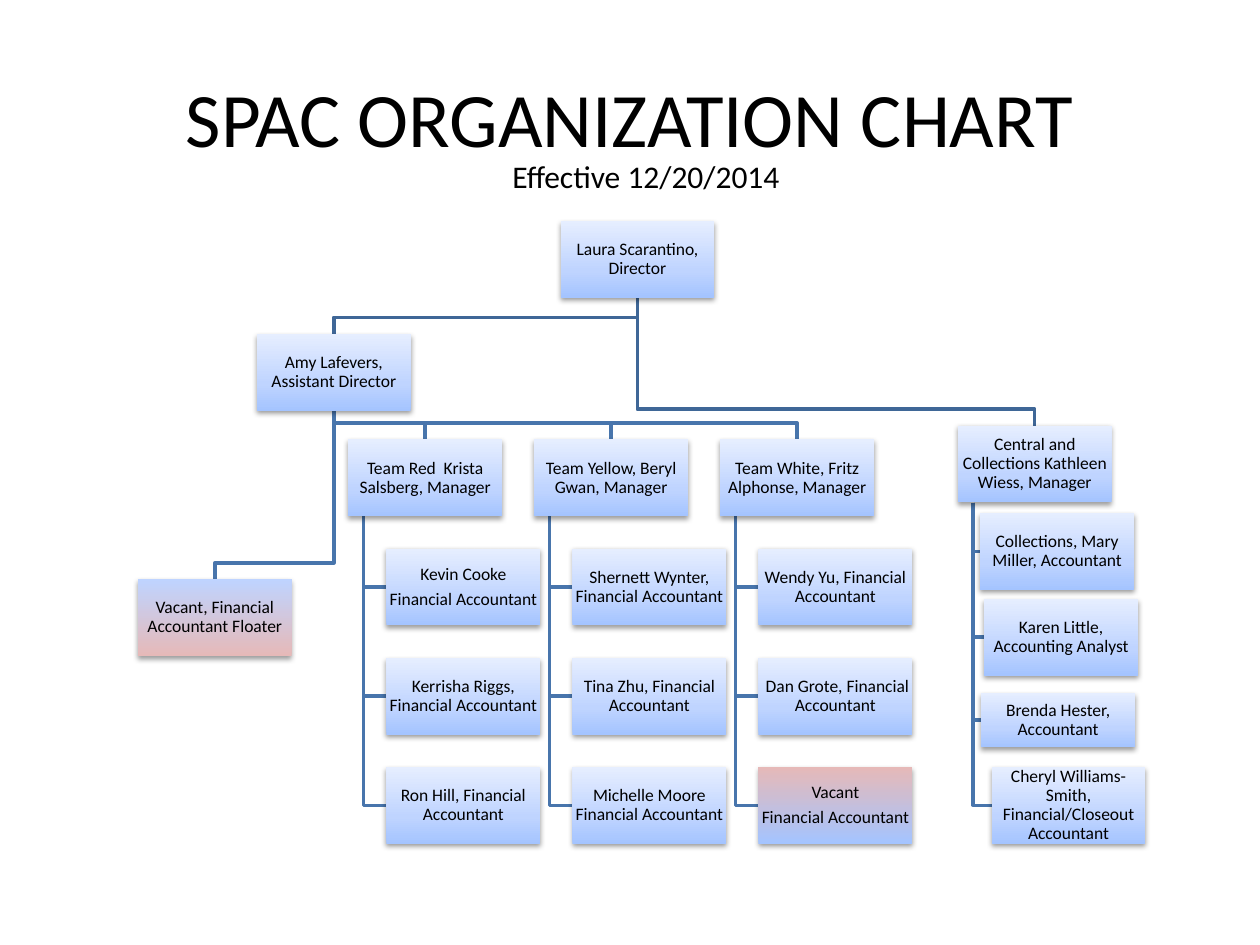
from collections import namedtuple

from lxml.etree import SubElement
from pptx import Presentation
from pptx.dml.color import RGBColor
from pptx.enum.shapes import MSO_SHAPE
from pptx.enum.text import MSO_ANCHOR, PP_ALIGN
from pptx.oxml.ns import qn
from pptx.util import Cm, Pt

COLORS = {
    "text": "000000",
    "shadow": "000000",
    "top_line": "3F6797",
    "line": "4875AC",
    "deep": "A4C4FF",
    "mid": "BFD4FF",
    "pale": "E6EEFF",
    "rose": "E6B9B8",
}
FILLS = {
    "staffed": [(0, "deep"), (35, "mid"), (100, "pale")],
    "floater": [(0, "rose"), (100, "mid"), (100, "pale")],
    "vacant": [(0, "deep"), (100, "rose"), (100, "pale")],
}
FONT = "Calibri"
BOX_W, BOX_H = 3.1, 1.55
BUS_GAP = 0.33
STEM_INSET = 0.31
TEAM_X, TEAM_Y, TEAM_PITCH = 7.02, 8.86, 3.75
MEMBER_INDENT, MEMBER_Y, MEMBER_PITCH = 0.77, 11.06, 2.2

Box = namedtuple("Box", "x y text fill h", defaults=("staffed", BOX_H))

DIRECTOR = Box(11.3, 4.45, "Laura Scarantino, Director")
ASSISTANT = Box(5.18, 6.73, "Amy Lafevers, Assistant Director")
FLOATER = Box(2.78, 11.68, "Vacant, Financial Accountant Floater", "floater")
CENTRAL = Box(19.31, 8.58, "Central and Collections Kathleen Wiess, Manager")
CENTRAL_STAFF = [
    Box(19.76, 10.34, "Collections, Mary Miller, Accountant"),
    Box(19.84, 12.07, "Karen Little, Accounting Analyst"),
    Box(19.78, 13.97, "Brenda Hester, Accountant", h=1.09),
    Box(19.99, 15.46, "Cheryl Williams-Smith, Financial/Closeout Accountant"),
]
TEAMS = [
    ("Team Red  Krista Salsberg, Manager",
     ["Kevin Cooke\nFinancial Accountant",
      "Kerrisha Riggs, Financial Accountant",
      "Ron Hill, Financial Accountant"]),
    ("Team Yellow, Beryl Gwan, Manager",
     ["Shernett Wynter, Financial Accountant",
      "Tina Zhu, Financial Accountant",
      "Michelle Moore Financial Accountant"]),
    ("Team White, Fritz Alphonse, Manager",
     ["Wendy Yu, Financial Accountant",
      " Dan Grote, Financial Accountant",
      "Vacant\nFinancial Accountant"]),
]


def rgb(name):
    return RGBColor.from_string(COLORS[name])


def write_text(s, text, size, align=PP_ALIGN.CENTER, anchor=MSO_ANCHOR.MIDDLE,
               margin=None, spacing=None, after=None):
    tf = s.text_frame
    tf.word_wrap = True
    tf.vertical_anchor = anchor
    if margin is not None:
        tf.margin_left = tf.margin_right = Cm(margin)
        tf.margin_top = tf.margin_bottom = Cm(margin)
    for i, line in enumerate(text.split("\n")):
        p = tf.add_paragraph() if i else tf.paragraphs[0]
        p.alignment = align
        p.line_spacing = spacing
        p.space_after = after
        r = p.add_run()
        r.text = line
        r.font.name = FONT
        r.font.size = Pt(size)
        r.font.color.rgb = rgb("text")


def add_label(slide, x, y, w, h, text, size, **fmt):
    s = slide.shapes.add_textbox(Cm(x), Cm(y), Cm(w), Cm(h))
    write_text(s, text, size, **fmt)


def add_color(parent, name, alpha=None):
    clr = SubElement(parent, qn("a:srgbClr"), val=COLORS[name])
    if alpha is not None:
        SubElement(clr, qn("a:alpha"), val=str(alpha * 1000))


def fill_gradient(s, stops):
    s.fill.gradient()
    s.fill.gradient_angle = 90
    gs_list = s.element.spPr.find(".//" + qn("a:gsLst"))
    for gs in list(gs_list):
        gs_list.remove(gs)
    for pos, name in stops:
        add_color(SubElement(gs_list, qn("a:gs"), pos=str(pos * 1000)), name)


def add_shadow(s):
    s.shadow.inherit = False
    effects = s.element.spPr.find(qn("a:effectLst"))
    shadow = SubElement(effects, qn("a:outerShdw"), blurRad=str(Pt(3.1)),
                        dist=str(Pt(1.6)), dir="5400000", rotWithShape="0")
    add_color(shadow, "shadow", 38)


def add_box(slide, box):
    s = slide.shapes.add_shape(MSO_SHAPE.RECTANGLE, Cm(box.x), Cm(box.y),
                               Cm(BOX_W), Cm(box.h))
    fill_gradient(s, FILLS[box.fill])
    s.line.fill.background()
    add_shadow(s)
    write_text(s, box.text, 10, margin=0.03, spacing=0.9, after=Pt(3.5))


def add_polyline(slide, points, color):
    pts = [(Cm(x), Cm(y)) for x, y in points]
    builder = slide.shapes.build_freeform(*pts[0])
    builder.add_line_segments(pts[1:], close=False)
    s = builder.convert_to_shape()
    s.fill.background()
    s.line.color.rgb = rgb(color)
    s.line.width = Pt(2)
    s.shadow.inherit = False


def link_below(slide, boss, report, color="line"):
    x1, x2 = boss.x + BOX_W / 2, report.x + BOX_W / 2
    bus = report.y - BUS_GAP
    add_polyline(slide, [(x1, boss.y + boss.h), (x1, bus), (x2, bus),
                         (x2, report.y)], color)


def link_beside(slide, boss, report):
    x = boss.x + STEM_INSET
    y = report.y + report.h / 2
    add_polyline(slide, [(x, boss.y + boss.h), (x, y), (report.x, y)], "line")


def build_teams():
    teams = []
    for col, (manager, members) in enumerate(TEAMS):
        x = TEAM_X + col * TEAM_PITCH
        staff = [Box(x + MEMBER_INDENT, MEMBER_Y + row * MEMBER_PITCH, text,
                     "vacant" if text.startswith("Vacant") else "staffed")
                 for row, text in enumerate(members)]
        teams.append((Box(x, TEAM_Y, manager), staff))
    return teams


def main():
    prs = Presentation()
    prs.slide_width, prs.slide_height = Cm(25.4), Cm(19.05)
    slide = prs.slides.add_slide(prs.slide_layouts[6])

    add_label(slide, 1.27, 0.76, 22.86, 3.18, "SPAC ORGANIZATION CHART", 44)

    teams = build_teams()
    groups = teams + [(CENTRAL, CENTRAL_STAFF)]
    for manager, staff in groups:
        for member in staff:
            link_beside(slide, manager, member)
    for report in [FLOATER] + [manager for manager, _ in teams]:
        link_below(slide, ASSISTANT, report)
    for report in (CENTRAL, ASSISTANT):
        link_below(slide, DIRECTOR, report, "top_line")

    for box in (DIRECTOR, ASSISTANT, FLOATER):
        add_box(slide, box)
    for manager, staff in groups:
        for box in [manager] + staff:
            add_box(slide, box)

    add_label(slide, 10.08, 3.05, 6.68, 1.02, "Effective 12/20/2014", 18,
              align=PP_ALIGN.LEFT, anchor=MSO_ANCHOR.TOP)
    prs.save("out.pptx")


if __name__ == "__main__":
    main()
